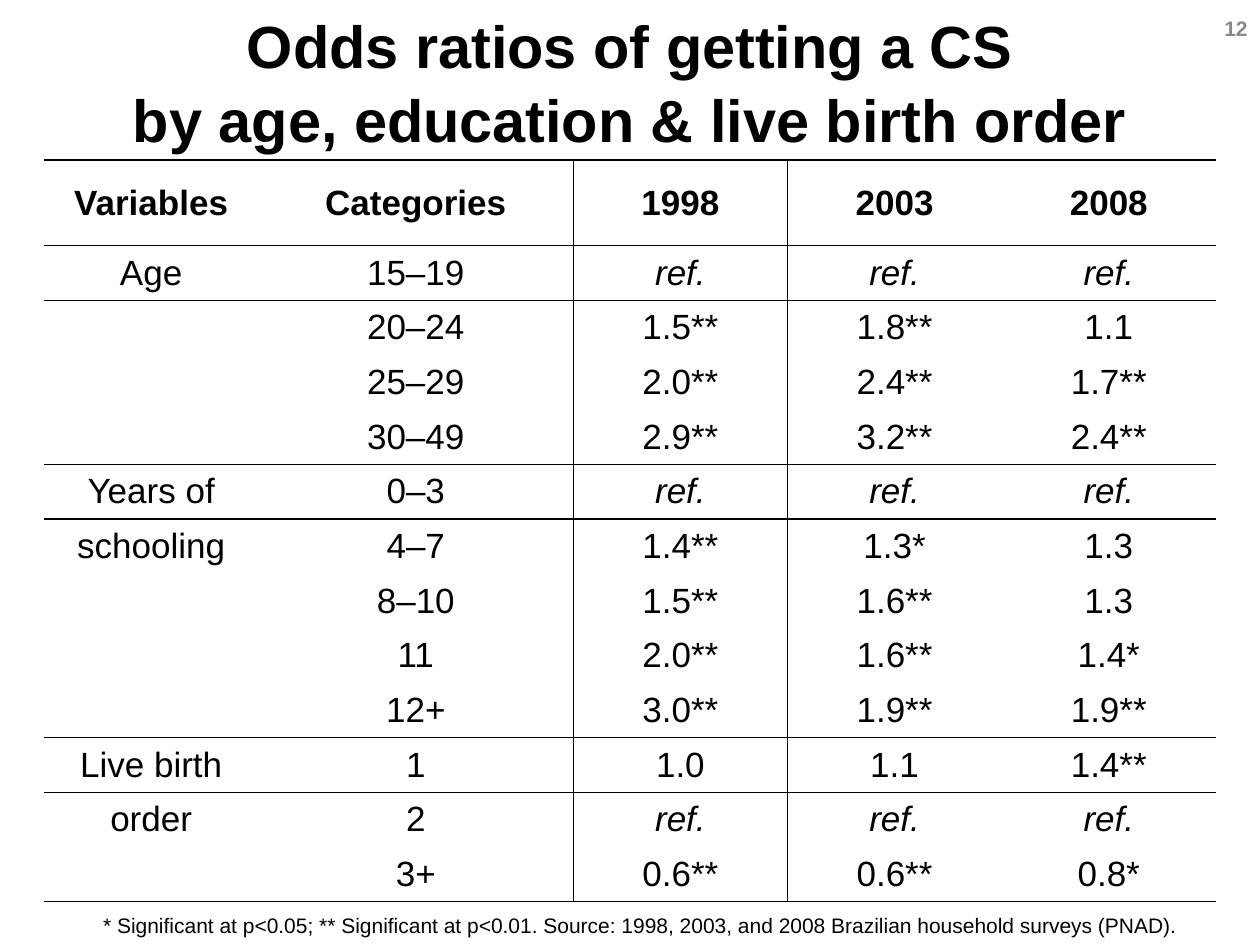
from lxml.etree import SubElement
from pptx import Presentation
from pptx.dml.color import RGBColor
from pptx.enum.text import MSO_ANCHOR as Anchor, PP_ALIGN as Align
from pptx.oxml.ns import qn
from pptx.util import Inches, Pt

BLACK = RGBColor(0x00, 0x00, 0x00)
GRAY = RGBColor(0x89, 0x89, 0x89)
WHITE = RGBColor(0xFF, 0xFF, 0xFF)
FONT = "Arial"
PLAIN_STYLE = "{2D5ABB26-0587-4C30-8999-92F81FD0307C}"

TITLE = "Odds ratios of getting a CS\vby age, education & live birth order"
FOOTNOTE = (
    "* Significant at p<0.05; ** Significant at p<0.01. "
    "Source: 1998, 2003, and 2008 Brazilian household surveys (PNAD)."
)
HEADER = ("Variables", "Categories", "1998", "2003", "2008")
AGE = [
    ("Age", "15–19", "ref.", "ref.", "ref."),
    ("", "20–24", "1.5**", "1.8**", "1.1"),
    ("", "25–29", "2.0**", "2.4**", "1.7**"),
    ("", "30–49", "2.9**", "3.2**", "2.4**"),
]
SCHOOLING = [
    ("Years of", "0–3", "ref.", "ref.", "ref."),
    ("schooling", "4–7", "1.4**", "1.3*", "1.3"),
    ("", "8–10", "1.5**", "1.6**", "1.3"),
    ("", "11", "2.0**", "1.6**", "1.4*"),
    ("", "12+", "3.0**", "1.9**", "1.9**"),
]
BIRTH_ORDER = [
    ("Live birth", "1", "1.0", "1.1", "1.4**"),
    ("order", "2", "ref.", "ref.", "ref."),
    ("", "3+", "0.6**", "0.6**", "0.8*"),
]
GROUPS = [[HEADER], AGE, SCHOOLING, BIRTH_ORDER]
COLUMN_WIDTHS = (1.7, 2.5, 1.7, 1.7, 1.7)
HEADER_HEIGHT, ROW_HEIGHT = 0.68, 0.43


def style_text(frame, size, color=BLACK, align=Align.CENTER, bold=False, italic=False):
    """Align the paragraphs and format every run of a text frame."""
    for paragraph in frame.paragraphs:
        paragraph.alignment = align
        paragraph.font.size = Pt(size)
        for run in paragraph.runs:
            run.font.name = FONT
            run.font.size = Pt(size)
            run.font.bold = bold
            run.font.italic = italic
            run.font.color.rgb = color


def add_text(slide, text, left, top, width, height, size, anchor=Anchor.MIDDLE, **style):
    """Add a wrapped text box and return its first paragraph."""
    box = slide.shapes.add_textbox(Inches(left), Inches(top), Inches(width), Inches(height))
    frame = box.text_frame
    frame.word_wrap = True
    frame.vertical_anchor = anchor
    frame.text = text
    style_text(frame, size, **style)
    return frame.paragraphs[0]


def set_borders(cell, sides):
    """Draw a thin black line on the given sides of a cell."""
    properties = cell._tc.get_or_add_tcPr()
    for side in sides:
        line = SubElement(properties, qn(f"a:ln{side}"), w=str(Pt(1)))
        fill = SubElement(line, qn("a:solidFill"))
        SubElement(fill, qn("a:srgbClr"), val=str(BLACK))


def fill_cell(cell, text, sides, is_header, is_wide_inset):
    """Write one table cell with its borders, margins and text style."""
    set_borders(cell, sides)
    cell.fill.solid()
    cell.fill.fore_color.rgb = WHITE
    cell.vertical_anchor = Anchor.MIDDLE
    cell.margin_left = cell.margin_right = Inches(0.1 if is_wide_inset else 0.07)
    cell.margin_top = cell.margin_bottom = Inches(0.05 if is_wide_inset else 0)
    cell.text_frame.text = text
    style_text(cell.text_frame, 20, bold=is_header, italic=text == "ref.")


def add_odds_table(slide):
    """Add the odds ratios, with a rule around each group of rows."""
    rows = [(row, group) for group in GROUPS for row in group]
    height = HEADER_HEIGHT + ROW_HEIGHT * (len(rows) - 1)
    frame = slide.shapes.add_table(
        len(rows), len(HEADER), Inches(0.35), Inches(1.27),
        Inches(sum(COLUMN_WIDTHS)), Inches(height),
    )
    table = frame.table
    table.first_row = table.horz_banding = False
    table._tbl.tblPr.find(qn("a:tableStyleId")).text = PLAIN_STYLE
    for column, width in zip(table.columns, COLUMN_WIDTHS):
        column.width = Inches(width)
    for row_index, (row, group) in enumerate(rows):
        is_header = row is HEADER
        table.rows[row_index].height = Inches(HEADER_HEIGHT if is_header else ROW_HEIGHT)
        rules = ("T" if row is group[0] else "") + ("B" if row is group[-1] else "")
        for column_index, text in enumerate(row):
            divider = {1: "R", 2: "L"}.get(column_index, "")
            fill_cell(
                table.cell(row_index, column_index), text, divider + rules,
                is_header, is_header or column_index == 0,
            )


def main():
    """Build the slide and save it."""
    presentation = Presentation()
    presentation.slide_width, presentation.slide_height = Inches(10), Inches(7.5)
    slide = presentation.slides.add_slide(presentation.slide_layouts[6])
    title = add_text(slide, TITLE, 0, 0.05, 10, 1.18, 34, bold=True)
    title.line_spacing = 1.04
    add_text(slide, "12", 9.49, 0, 0.51, 0.44, 12, color=GRAY, align=Align.RIGHT, bold=True)
    add_odds_table(slide)
    footnote = add_text(
        slide, FOOTNOTE, 0.72, 7.19, 8.77, 0.26, 12, anchor=Anchor.TOP, align=Align.JUSTIFY
    )
    indent = footnote._p.get_or_add_pPr()
    indent.set("marL", str(Inches(0.38)))
    indent.set("indent", str(Inches(-0.38)))
    presentation.save("out.pptx")


if __name__ == "__main__":
    main()
